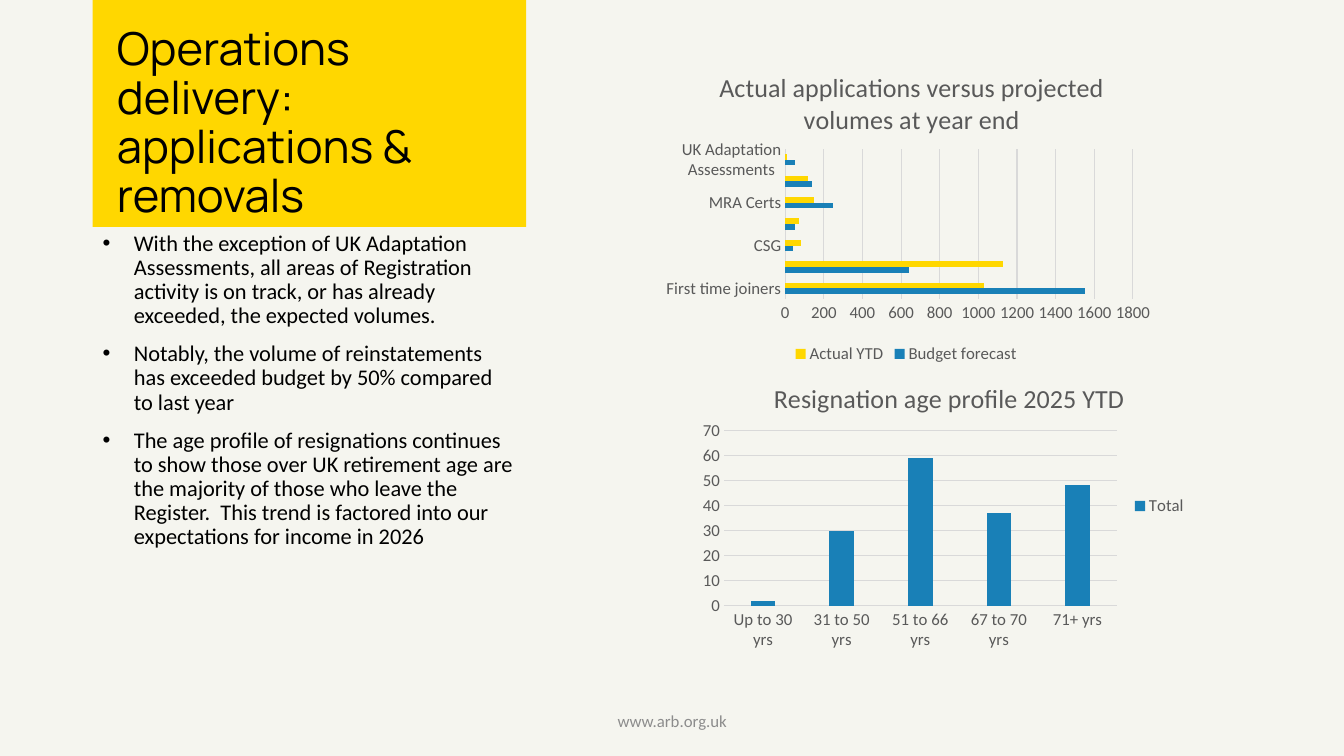
from pptx import Presentation
from pptx.chart.data import CategoryChartData
from pptx.dml.color import RGBColor
from pptx.enum.chart import XL_CHART_TYPE, XL_LEGEND_POSITION, XL_TICK_MARK
from pptx.enum.shapes import MSO_SHAPE
from pptx.enum.text import MSO_ANCHOR, PP_ALIGN
from pptx.oxml import parse_xml
from pptx.oxml.ns import nsdecls, qn
from pptx.util import Inches, Pt

PAPER = RGBColor(0xF5, 0xF5, 0xEF)
GOLD = RGBColor(0xFF, 0xD7, 0x00)
BLUE = RGBColor(0x19, 0x80, 0xB7)
BLACK = RGBColor(0, 0, 0)
SLATE = RGBColor(0x59, 0x59, 0x59)
GREY = RGBColor(0x8C, 0x8C, 0x8C)
RULE = RGBColor(0xD9, 0xD9, 0xD9)

COLS, ROWS = 40, 30
POINTS = [
    "With the exception of UK Adaptation Assessments, all areas of Registration activity is on track, "
    "or has already exceeded, the expected volumes.",
    "Notably, the volume of reinstatements has exceeded budget by 50% compared to last year",
    "The age profile of resignations continues to show those over UK retirement age are the majority of "
    "those who leave the Register.  This trend is factored into our expectations for income in 2026",
]
ROUTES = ["First time joiners", "Rejoins", "CSG", "EU Certs", "MRA Certs",
          "Prescribed Exams", "UK Adaptation Assessments"]
VOLUMES = [("Budget forecast", [1550, 640, 40, 50, 250, 140, 50], BLUE),
           ("Actual YTD", [1030, 1130, 80, 70, 150, 120, 10], GOLD)]
AGES = ["Up to 30 yrs", "31 to 50 yrs", "51 to 66 yrs", "67 to 70 yrs", "71+ yrs"]
LEAVERS = [("Total", [2, 30, 59, 37, 48], BLUE)]


class Board:
    """Draws styled elements on one slide, placed by columns and rows."""

    def __init__(self, deck):
        self.wide = deck.slide_width / COLS
        self.high = deck.slide_height / ROWS
        self.slide = deck.slides.add_slide(deck.slide_layouts[6])
        fill = self.slide.background.fill
        fill.solid()
        fill.fore_color.rgb = PAPER

    def place(self, col, row, cols, rows):
        return [round(v) for v in (col * self.wide, row * self.high,
                                   cols * self.wide, rows * self.high)]

    def style(self, font, size, color, name="Calibri"):
        for key, value in {"size": Pt(size), "name": name, "bold": False}.items():
            setattr(font, key, value)
        font.color.rgb = color

    def title(self, text, *area):
        box = self.slide.shapes.add_shape(MSO_SHAPE.RECTANGLE, *self.place(*area))
        box.shadow.inherit = False
        box.fill.solid()
        box.fill.fore_color.rgb = GOLD
        box.line.fill.background()
        frame = box.text_frame
        for key, value in {"word_wrap": True, "vertical_anchor": MSO_ANCHOR.BOTTOM,
                           "margin_left": Inches(0.24)}.items():
            setattr(frame, key, value)
        para = frame.paragraphs[0]
        para.text = text
        para.alignment = PP_ALIGN.LEFT
        para.line_spacing = 0.9
        self.style(para.font, 32.4, BLACK, "Manrope")

    def text(self, area, anchor):
        frame = self.slide.shapes.add_textbox(*self.place(*area)).text_frame
        frame.word_wrap = True
        frame.vertical_anchor = anchor
        return frame

    def bullets(self, items, *area):
        frame = self.text(area, MSO_ANCHOR.TOP)
        for num, item in enumerate(items):
            para = frame.add_paragraph() if num else frame.paragraphs[0]
            para.text = item
            para.line_spacing = 0.9
            para.space_before = Pt(10 if num else 0)
            props = para._p.get_or_add_pPr()
            props.set("marL", str(Inches(0.31)))
            props.set("indent", str(-Inches(0.31)))
            props.append(parse_xml(f'<a:buFont {nsdecls("a")} typeface="Arial"/>'))
            props.append(parse_xml(f'<a:buChar {nsdecls("a")} char="•"/>'))
            self.style(para.font, 16, BLACK)

    def footer(self, text, *area):
        para = self.text(area, MSO_ANCHOR.MIDDLE).paragraphs[0]
        para.text = text
        para.alignment = PP_ALIGN.CENTER
        self.style(para.font, 12, GREY)

    def layout(self, node, index, shares, inner=""):
        old = node.find(qn("c:layout"))
        if old is not None:
            node.remove(old)
        modes = "".join(f'<c:{k}Mode val="edge"/>' for k in "xy")
        spots = "".join(f'<c:{k} val="{v}"/>' for k, v in zip("xywh", shares))
        node.insert(index, parse_xml(
            f'<c:layout {nsdecls("c")}><c:manualLayout>{inner}{modes}{spots}'
            '</c:manualLayout></c:layout>'))

    def axis(self, axis, grid):
        axis.major_tick_mark = axis.minor_tick_mark = XL_TICK_MARK.NONE
        axis.has_major_gridlines = grid
        self.style(axis.tick_labels.font, 12, SLATE)
        line = axis.format.line
        if grid:
            line.fill.background()
            line = axis.major_gridlines.format.line
        line.color.rgb = RULE
        line.width = Pt(0.75)

    def chart(self, kind, head, cats, rows, area, gap, lap, side, spot, plot):
        data = CategoryChartData()
        data.categories = cats
        for name, values, _ in rows:
            data.add_series(name, values)
        chart = self.slide.shapes.add_chart(kind, *self.place(*area), data).chart
        self.style(chart.font, 10, BLACK)
        chart.has_title = True
        para = chart.chart_title.text_frame.paragraphs[0]
        para.text = head
        self.style(para.font, 18.6, SLATE)
        self.layout(chart.chart_title._element, 1, spot)
        self.layout(chart._chartSpace.find(".//" + qn("c:plotArea")), 0, plot,
                    '<c:layoutTarget val="inner"/>')
        self.axis(chart.category_axis, False)
        self.axis(chart.value_axis, True)
        chart.has_legend = True
        chart.legend.position = side
        chart.legend.include_in_layout = False
        self.style(chart.legend.font, 12, SLATE)
        bars = chart.plots[0]
        for key, value in {"gap_width": gap, "overlap": lap,
                           "vary_by_categories": False}.items():
            setattr(bars, key, value)
        for bar, (_, _, color) in zip(bars.series, rows):
            bar.format.fill.solid()
            bar.format.fill.fore_color.rgb = color


def main():
    deck = Presentation()
    deck.slide_width, deck.slide_height = Inches(13.33), Inches(7.5)
    board = Board(deck)
    board.title("Operations delivery: applications & removals", 2.76, 0, 12.9, 9)
    board.bullets(POINTS, 2.76, 9, 12.9, 19.32)
    board.footer("www.arb.org.uk", 13.26, 27.8, 13.5, 1.6)
    board.chart(XL_CHART_TYPE.BAR_CLUSTERED,
                "Actual applications versus projected volumes at year end",
                ROUTES, VOLUMES, (19.47, 1.64, 15, 12.96), 182, 0,
                XL_LEGEND_POSITION.BOTTOM, (0.12, 0.07), (0.26, 0.33, 0.69, 0.46))
    board.chart(XL_CHART_TYPE.COLUMN_CLUSTERED, "Resignation age profile 2025 YTD",
                AGES, LEAVERS, (20.64, 14.08, 15, 12), 219, -27,
                XL_LEGEND_POSITION.RIGHT, (0.15, 0.07), (0.06, 0.25, 0.78, 0.58))
    deck.save("out.pptx")


if __name__ == "__main__":
    main()
